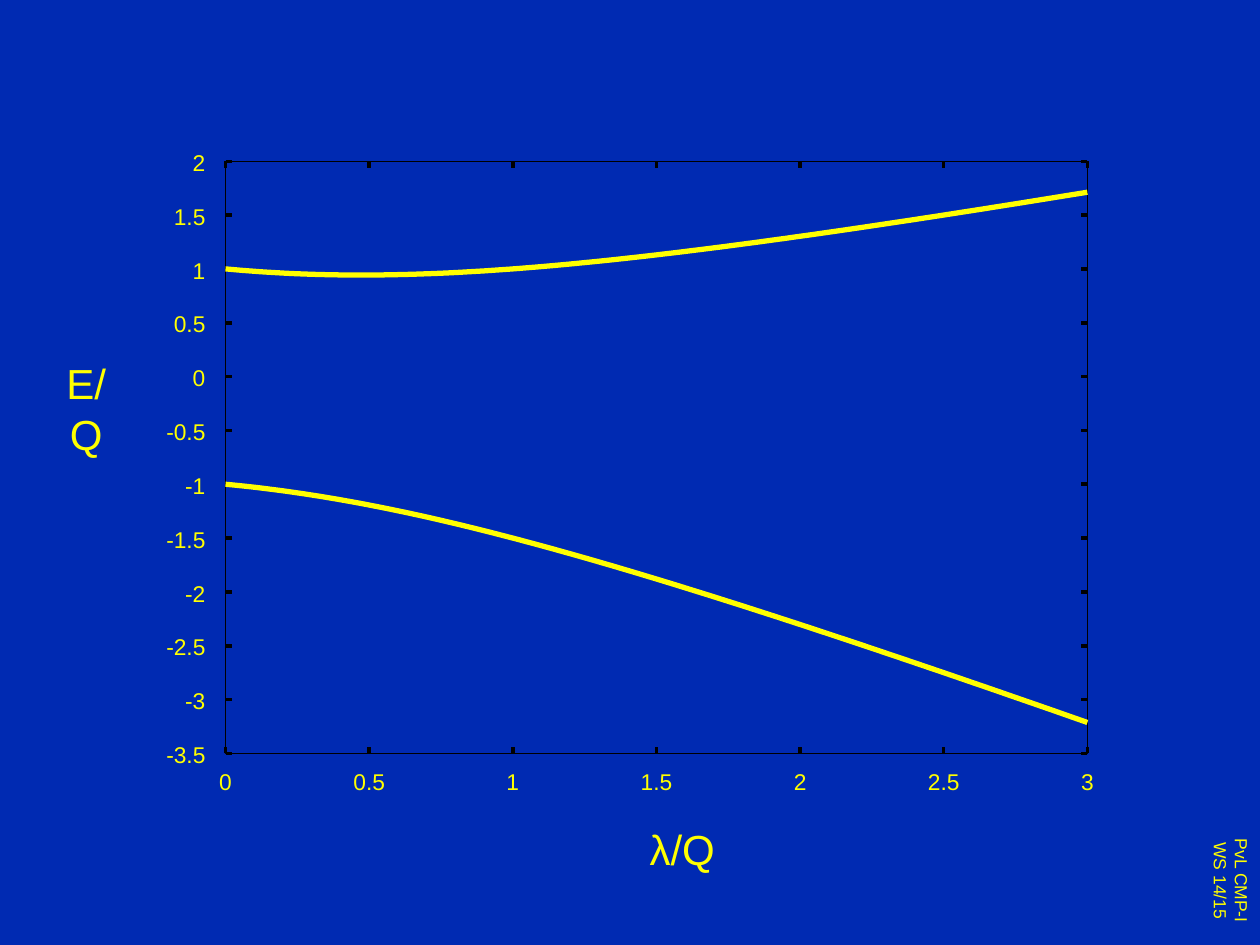
from dataclasses import dataclass
from math import sqrt

from lxml.etree import SubElement
from pptx import Presentation
from pptx.dml.color import RGBColor
from pptx.enum.shapes import MSO_CONNECTOR, MSO_SHAPE
from pptx.enum.text import MSO_AUTO_SIZE, PP_ALIGN
from pptx.oxml.ns import qn
from pptx.util import Inches, Pt

BLUE, YELLOW, BLACK = "002AB2", "FFFF00", "000000"
TICK = 0.05
STEP = 0.5
SAMPLES = 100
GLYPH_WIDTHS = {"-": 0.06, ".": 0.05}
DIGIT_WIDTH = 0.1
LABEL_HEIGHT = 0.22


@dataclass(frozen=True)
class Plot:
    left: float
    top: float
    width: float
    height: float
    x_max: float
    y_min: float
    y_max: float

    @property
    def right(self) -> float:
        return self.left + self.width

    @property
    def bottom(self) -> float:
        return self.top + self.height

    def x(self, value: float) -> float:
        return self.left + self.width * value / self.x_max

    def y(self, value: float) -> float:
        return self.top + self.height * (self.y_max - value) / (self.y_max - self.y_min)


@dataclass(frozen=True)
class Label:
    lines: tuple[str, ...]
    left: float
    top: float
    width: float
    height: float
    size: int
    inset: bool = True
    vertical: bool = False


def colour(value: str) -> RGBColor:
    return RGBColor.from_string(value)


def draw_label(page, label: Label) -> None:
    box = page.shapes.add_textbox(
        *map(Inches, (label.left, label.top, label.width, label.height)))
    frame = box.text_frame
    frame.word_wrap = False
    frame.auto_size = MSO_AUTO_SIZE.SHAPE_TO_FIT_TEXT
    if not label.inset:
        frame.margin_left = frame.margin_right = 0
        frame.margin_top = frame.margin_bottom = 0
    if label.vertical:
        box.element.txBody.bodyPr.set("vert", "vert")
    frame.text = "\n".join(label.lines)
    for para in frame.paragraphs:
        para.alignment = PP_ALIGN.CENTER
        para.font.name = "Arial"
        para.font.size = Pt(label.size)
        para.font.color.rgb = colour(YELLOW)


def draw_tick(page, x: float, y: float, dx: float, dy: float) -> None:
    tick = page.shapes.add_connector(
        MSO_CONNECTOR.STRAIGHT, *map(Inches, (x, y, x + dx, y + dy)))
    tick.line.color.rgb = colour(BLACK)
    tick.line.width = Pt(0)
    SubElement(tick.element.spPr, qn("a:effectLst"))


def number_label(value: float, left: float, top: float, align: float) -> Label:
    text = f"{value:g}"
    width = sum(GLYPH_WIDTHS.get(glyph, DIGIT_WIDTH) for glyph in text)
    return Label((text,), left - width * align, top, width, LABEL_HEIGHT, 13, inset=False)


def draw_axes(page, plot: Plot) -> None:
    for index in range(round((plot.y_max - plot.y_min) / STEP) + 1):
        value = plot.y_min + index * STEP
        y = plot.y(value)
        draw_tick(page, plot.left, y, TICK, 0)
        draw_tick(page, plot.right, y, -TICK, 0)
        draw_label(page, number_label(value, plot.left - 0.16, y - 0.1, 1))
    for index in range(round(plot.x_max / STEP) + 1):
        value = index * STEP
        x = plot.x(value)
        draw_tick(page, x, plot.bottom, 0, -TICK)
        draw_tick(page, x, plot.top, 0, TICK)
        draw_label(page, number_label(value, x, plot.bottom + 0.11, 0.5))


def draw_frame(page, plot: Plot) -> None:
    frame = page.shapes.add_shape(
        MSO_SHAPE.RECTANGLE,
        *map(Inches, (plot.left, plot.top, plot.width, plot.height)))
    frame.shadow.inherit = False
    frame.fill.background()
    frame.line.color.rgb = colour(BLACK)
    frame.line.width = Pt(0)


def energy(coupling: float, branch: int) -> float:
    return -coupling / 4 + branch * sqrt(1 + 9 * coupling ** 2 / 16)


def draw_level(page, plot: Plot, branch: int) -> None:
    couplings = [plot.x_max * index / SAMPLES for index in range(SAMPLES + 1)]
    points = [(Inches(plot.x(coupling)), Inches(plot.y(energy(coupling, branch))))
              for coupling in couplings]
    builder = page.shapes.build_freeform(*points[0])
    builder.add_line_segments(points[1:], close=False)
    curve = builder.convert_to_shape()
    curve.shadow.inherit = False
    curve.fill.background()
    curve.line.color.rgb = colour(YELLOW)
    curve.line.width = Pt(3)


def main() -> None:
    deck = Presentation()
    deck.slide_width, deck.slide_height = Inches(10), Inches(7.5)
    page = deck.slides.add_slide(deck.slide_layouts[6])
    page.background.fill.solid()
    page.background.fill.fore_color.rgb = colour(BLUE)

    plot = Plot(1.79, 1.28, 6.84, 4.7, x_max=3, y_min=-3.5, y_max=2)
    draw_label(page, Label(("PvL CMP-I", "WS 14/15"), 9.45, 6.6, 0.54, 0.78, 10, vertical=True))
    draw_axes(page, plot)
    draw_frame(page, plot)
    for branch in (1, -1):
        draw_level(page, plot, branch)
    draw_label(page, Label(("E/Q",), 0.3, 2.79, 0.77, 0.5, 24))
    draw_label(page, Label(("λ/Q",), 5.05, 6.49, 0.73, 0.5, 24))
    deck.save("out.pptx")


if __name__ == "__main__":
    main()
